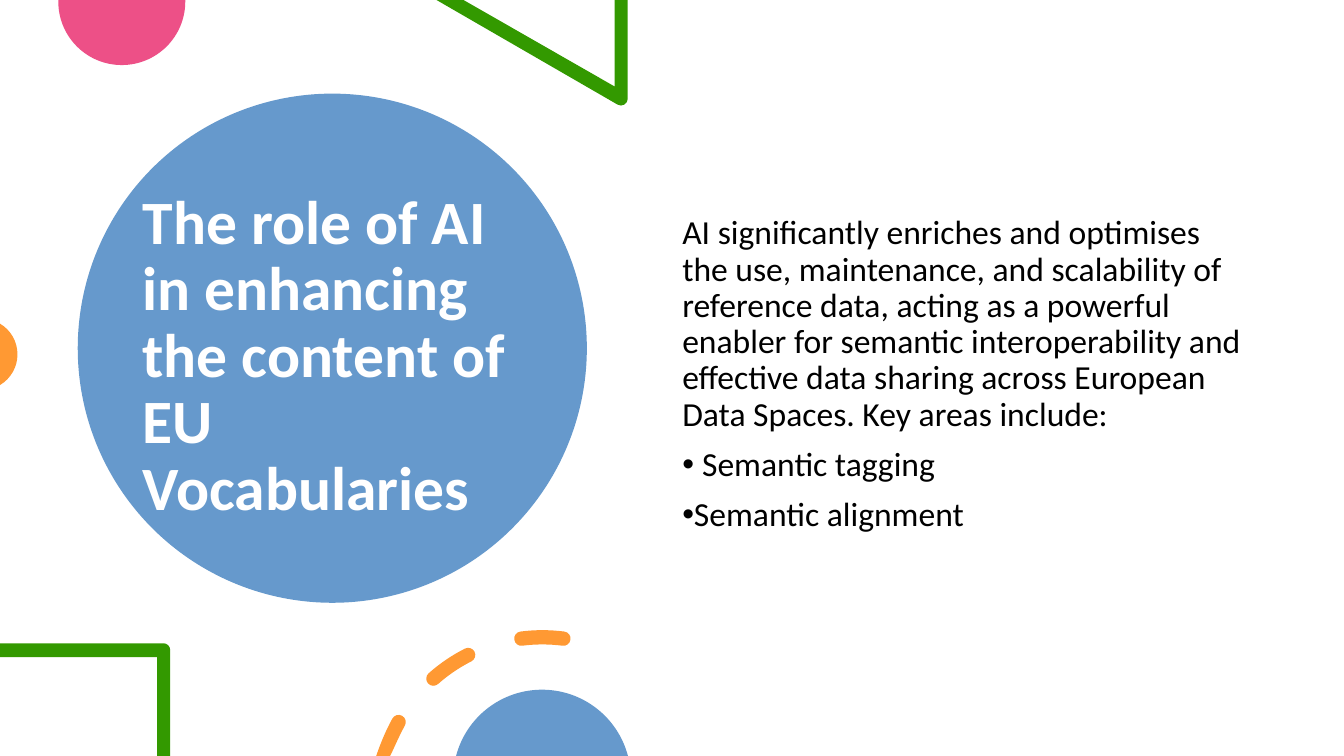
from math import cos, radians, sin, tan

from lxml import etree
from pptx import Presentation
from pptx.dml.color import RGBColor
from pptx.enum.shapes import MSO_SHAPE
from pptx.enum.text import MSO_ANCHOR, MSO_AUTO_SIZE, PP_ALIGN
from pptx.oxml.ns import qn
from pptx.util import Cm, Pt

OVAL = MSO_SHAPE.OVAL
TOP, MIDDLE = MSO_ANCHOR.TOP, MSO_ANCHOR.MIDDLE
LEFT = PP_ALIGN.LEFT
NO_AUTOFIT = MSO_AUTO_SIZE.NONE

WHITE = RGBColor(0xFF, 0xFF, 0xFF)
BLACK = RGBColor(0x00, 0x00, 0x00)
BLUE = RGBColor(0x66, 0x99, 0xCC)
PINK = RGBColor(0xED, 0x50, 0x87)
GREEN = RGBColor(0x33, 0x99, 0x00)
ORANGE = RGBColor(0xFF, 0x99, 0x33)

WIDTH, HEIGHT = 33.87, 19.05
CORNER = 0.17

TITLE = "The role of AI\vin enhancing the content of EU Vocabularies"
INTRO = (
    "AI significantly enriches and optimises the use, maintenance, and "
    "scalability of reference data, acting as a powerful enabler for semantic "
    "interoperability and effective data sharing across European Data Spaces. "
    "Key areas include:"
)


def on_circle(cx, cy, radius, angle):
    a = radians(angle)
    return cx + radius * cos(a), cy + radius * sin(a)


def corners(*points):
    return [(point,) for point in points]


def arc(cx, cy, radius, start, end, parts=1):
    step = (end - start) / parts
    k = 4 / 3 * tan(radians(step / 4)) * radius
    steps = corners(on_circle(cx, cy, radius, start))
    for i in range(parts):
        a, b = start + step * i, start + step * (i + 1)
        p0, p1 = (on_circle(cx, cy, radius, angle) for angle in (a, b))
        c0 = on_circle(*p0, k, a + 90)
        c1 = on_circle(*p1, k, b - 90)
        steps.append((c0, c1, p1))
    return steps


def dash(cx, cy, radius, half, start, end):
    first, last = (on_circle(cx, cy, radius, angle) for angle in (start, end))
    steps = (
        arc(cx, cy, radius + half, start, end)
        + arc(*last, half, end, end + 180, 2)[1:]
        + arc(cx, cy, radius - half, end, start)[1:]
        + arc(*first, half, start + 180, start + 360, 2)[1:]
    )
    return [tuple((x, min(y, HEIGHT)) for x, y in step) for step in steps]


def write(p, text, size=24, color=BLACK, bold=False, before=0, margin=None):
    pPr = p._p.get_or_add_pPr()
    bulleted = margin is not None
    pPr.set("marL", str(Cm(margin or 0)))
    pPr.set("indent", str(Cm(-0.64 if bulleted else 0)))
    if bulleted:
        etree.SubElement(pPr, qn("a:buChar")).set("char", "•")
    else:
        etree.SubElement(pPr, qn("a:buNone"))
    p.alignment = LEFT
    p.line_spacing = 0.9
    p.space_before = Pt(before)
    p.text = text
    for r in p.runs:
        r.font.name = "Calibri"
        r.font.size = Pt(size)
        r.font.bold = bold
        r.font.color.rgb = color


class Deck:
    def __init__(self):
        self.prs = Presentation()
        self.prs.slide_width = Cm(WIDTH)
        self.prs.slide_height = Cm(HEIGHT)
        self.s = self.prs.slides.add_slide(self.prs.slide_layouts[1])

    def paint(self, sp, color):
        sp.shadow.inherit = False
        sp.fill.solid()
        sp.fill.fore_color.rgb = color
        sp.line.fill.background()

    def circle(self, x, y, size, color):
        sp = self.s.shapes.add_shape(OVAL, Cm(x), Cm(y), Cm(size), Cm(size))
        self.paint(sp, color)

    def outline(self, color, *contours):
        builder = None
        for contour in contours:
            points = [(Cm(x), Cm(y)) for step in contour for x, y in step]
            if builder is None:
                builder = self.s.shapes.build_freeform(*points[0])
            else:
                builder.move_to(*points[0])
            builder.add_line_segments(points[1:], close=True)
        sp = builder.convert_to_shape()
        self.paint(sp, color)
        lines = iter(list(sp.element.iter(qn("a:lnTo"))))
        for contour in contours:
            for step in contour[1:]:
                group = [next(lines) for _ in step]
                if len(group) == 3:
                    curve = etree.Element(qn("a:cubicBezTo"))
                    group[0].addprevious(curve)
                    for line in group:
                        curve.append(line[0])
                        line.getparent().remove(line)

    def placeholder(self, index, x, y, w, h, anchor):
        sp = self.s.placeholders[index]
        sp.left, sp.top, sp.width, sp.height = Cm(x), Cm(y), Cm(w), Cm(h)
        self.s.shapes.element.append(sp.element)
        tf = sp.text_frame
        tf.word_wrap = True
        tf.auto_size = NO_AUTOFIT
        tf.vertical_anchor = anchor
        return tf


def main():
    deck = Deck()

    deck.circle(1.96, 2.36, 12.83, BLUE)
    tf = deck.placeholder(0, 3.34, 3.35, 10.31, 11.3, MIDDLE)
    write(tf.paragraphs[0], TITLE, size=44, color=WHITE, bold=True)

    deck.outline(PINK, corners((4.67, 0), (1.47, 0)) + arc(3.07, 0.04, 1.6, 180, 0, 2))
    triangle = corners((15.82, 0), (15.49, 0), (15.49, 2.18), (11.68, 0), (11, 0))
    deck.outline(GREEN, triangle + arc(15.65, 2.49, CORNER, 120, 0, 2))
    deck.outline(ORANGE, arc(-0.46, 8.93, 0.9, -59.2, 59.2, 2))

    tf = deck.placeholder(1, 16.94, 5.31, 14.6, 8.81, TOP)
    write(tf.paragraphs[0], INTRO)
    write(tf.add_paragraph(), "Semantic tagging", before=10, margin=0.5)
    write(tf.add_paragraph(), "Semantic alignment", before=10, margin=0)

    square = corners(
        (0, 16.21), (0, 16.56), (3.96, 16.56), (3.96, HEIGHT), (4.29, HEIGHT)
    )
    deck.outline(GREEN, arc(4.12, 16.38, CORNER, 0, -90) + square)
    middles = [-90 - 34.2 * i for i in range(3)]
    deck.outline(
        ORANGE,
        *[dash(13.67, 20.2, 4.14, 0.18, m - 7.35, m + 7.35) for m in middles],
    )
    deck.outline(BLUE, arc(13.66, 19.62, 2.24, -165.3, -14.7, 2))

    deck.prs.save("out.pptx")


if __name__ == "__main__":
    main()
